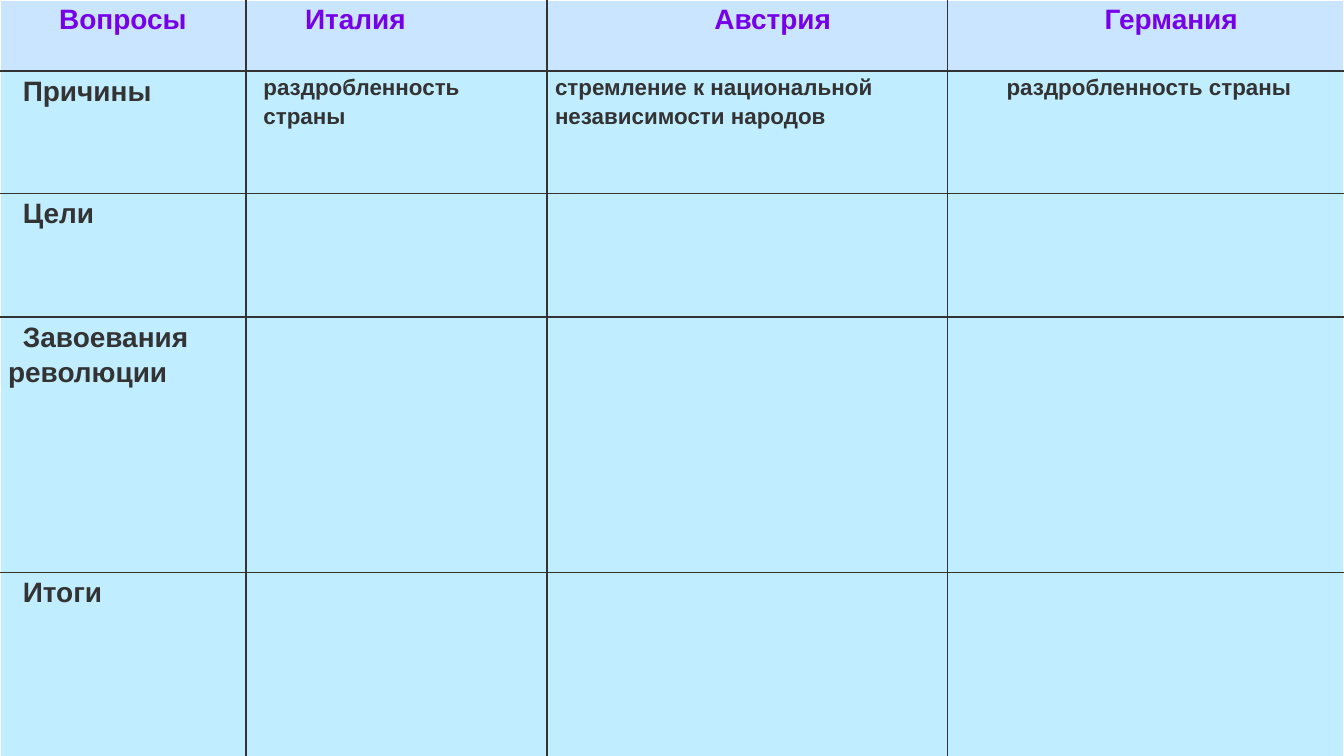
from dataclasses import dataclass

from lxml import etree
from pptx import Presentation
from pptx.dml import color
from pptx.enum import text as t
from pptx.oxml import ns
from pptx.table import _Cell
from pptx.util import Inches, Pt

INK, PURPLE, WHITE = "333333", "7700E9", "FFFFFF"
HEADER_FILL, BODY_FILL = "C9E5FF", "C0EDFF"
COLUMN_WIDTHS = [1.83, 2.24, 2.98, 2.95]
ROW_HEIGHTS = [0.53, 0.91, 0.92, 1.9, 1.37]


@dataclass
class Entry:
    text: str
    margin: float = 0
    indent: float = 0
    centred: bool = False
    size: int = 15
    ink: str = INK


def heading(country: str, centred: bool = True) -> Entry:
    return Entry(country, margin=0.38, centred=centred, ink=PURPLE)


def question(topic: str) -> Entry:
    return Entry(topic, indent=0.11)


def cause(reason: str, margin: float = 0) -> Entry:
    return Entry(reason, margin=margin, size=12)


ENTRIES = [
    [Entry("Вопросы", 0.29, -0.29, True, ink=PURPLE),
     heading("Италия", centred=False), heading("Австрия"), heading("Германия")],
    [question("Причины"), cause("раздробленность страны", 0.07),
     cause("стремление к национальной независимости народов"),
     cause("раздробленность страны", 0.38)],
    [question("Цели")],
    [question("Завоевания революции")],
    [question("Итоги")],
]


def rgb(value: str) -> color.RGBColor:
    return color.RGBColor.from_string(value)


def write(cell: _Cell, words: str, *, margin: float, indent: float,
          centred: bool, size: int, ink: str) -> None:
    paragraph = cell.text_frame.paragraphs[0]
    paragraph.alignment = t.PP_ALIGN.CENTER if centred else t.PP_ALIGN.LEFT
    paragraph.line_spacing = 1.15
    properties = paragraph._p.get_or_add_pPr()
    properties.set("marL", str(Inches(margin)))
    properties.set("indent", str(Inches(indent)))
    run = paragraph.add_run()
    run.text = words
    run.font.name = "Arial"
    run.font.size = Pt(size)
    run.font.bold = True
    run.font.color.rgb = rgb(ink)


def draw_borders(cell: _Cell, row: int, column: int) -> None:
    outer = {
        "L": column == 0,
        "R": column == len(COLUMN_WIDTHS) - 1,
        "T": row == 0,
        "B": row == len(ROW_HEIGHTS) - 1,
    }
    properties = cell._tc.get_or_add_tcPr()
    for side, on_edge in outer.items():
        line = etree.SubElement(properties, ns.qn(f"a:ln{side}"), w=str(Pt(1)))
        fill = etree.SubElement(line, ns.qn("a:solidFill"))
        etree.SubElement(fill, ns.qn("a:srgbClr"), val=WHITE if on_edge else INK)


def style_cell(cell: _Cell, row: int, column: int) -> None:
    cell.margin_left = cell.margin_right = Inches(0.06)
    cell.margin_top = cell.margin_bottom = 0
    draw_borders(cell, row, column)
    cell.fill.solid()
    cell.fill.fore_color.rgb = rgb(HEADER_FILL if row == 0 else BODY_FILL)


def main() -> None:
    presentation = Presentation()
    presentation.slide_width = Inches(10)
    presentation.slide_height = Inches(10 * 9 / 16)
    slide = presentation.slides.add_slide(presentation.slide_layouts[6])

    revolutions = slide.shapes.add_table(
        len(ROW_HEIGHTS), len(COLUMN_WIDTHS), 0, 0,
        Inches(sum(COLUMN_WIDTHS)), Inches(sum(ROW_HEIGHTS))).table
    revolutions.horz_banding = False
    revolutions.first_row = False
    for column, width in zip(revolutions.columns, COLUMN_WIDTHS):
        column.width = Inches(width)
    for row, height in zip(revolutions.rows, ROW_HEIGHTS):
        row.height = Inches(height)

    for r, entries in enumerate(ENTRIES):
        for c in range(len(COLUMN_WIDTHS)):
            style_cell(revolutions.cell(r, c), r, c)
        for c, entry in enumerate(entries):
            write(revolutions.cell(r, c), entry.text, margin=entry.margin,
                  indent=entry.indent, centred=entry.centred,
                  size=entry.size, ink=entry.ink)

    presentation.save("out.pptx")


if __name__ == "__main__":
    main()
